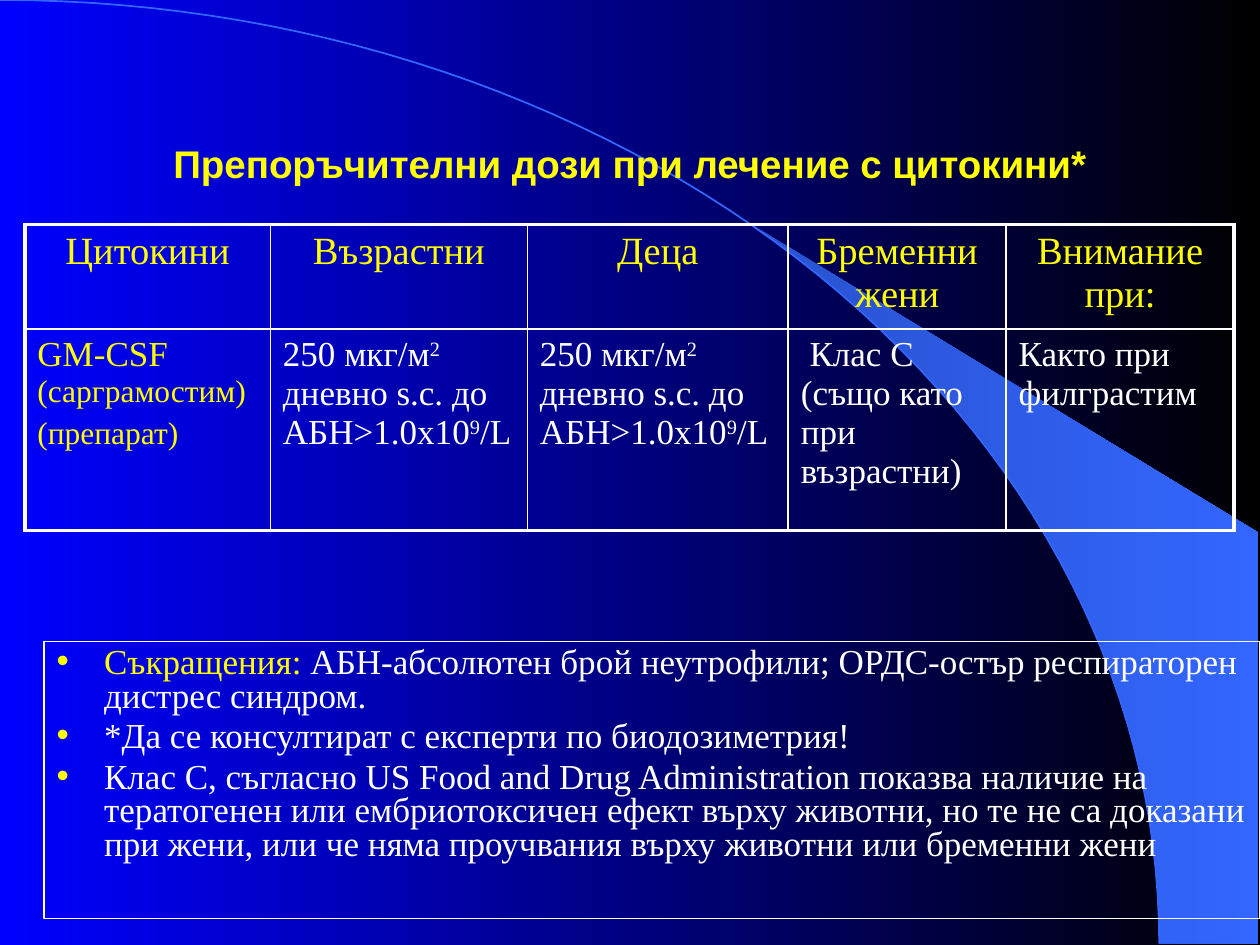
import math

import pptx
import pptx.dml.color
import pptx.enum.text
import pptx.oxml
import pptx.oxml.ns
import pptx.util
from pptx.util import Cm, Pt

COLOURS = {"blue": "0000FF", "black": "000000", "white": "FFFFFF", "yellow": "FFFF00",
           "arc": "3366FF", "arc_dark": "2851CC"}
SERIF = "Times New Roman"
ALIGN = pptx.enum.text.PP_ALIGN
ANCHOR = pptx.enum.text.MSO_ANCHOR
ARC_WIDTH, ARC_HEIGHT = 23.37, 19.02
RIGHT_EDGE = 25.37

TITLE = "Препоръчителни дози при лечение с цитокини*"
COLUMN_WIDTHS = [4.95, 5.18, 5.26, 4.39, 4.6]
ROW_HEIGHTS = [1.96, 4.06]
HEADERS = ["Цитокини", "Възрастни", "Деца", "Бременни жени", "Внимание при:"]
DOSE = "250 мкг/м^2^ дневно s.c. до АБН>1.0x10^9^/L"
# Each paragraph is a list of (text, size, colour); ^ encloses superscripts.
DRUG = [[("GM-CSF ", 20, "yellow"), ("(сарграмостим)", 18, "yellow")],
        [("(препарат)", 18, "yellow")]]
DETAILS = [DOSE, DOSE, " Клас С (също като при възрастни)", "Както при филграстим"]
NOTES = [
    [("Съкращения:", 20, "yellow"),
     (" АБН-абсолютен брой неутрофили; ОРДС-остър респираторен дистрес синдром.", 20, "white")],
    [("*Да се консултират с експерти по биодозиметрия!", 20, "white")],
    [("Клас С, съгласно US Food and Drug Administration показва наличие на тератогенен или "
      "ембриотоксичен ефект върху животни, но те не са доказани при жени, или че няма "
      "проучвания върху животни или бременни жени", 20, "white")],
]


def rgb(name):
    return pptx.dml.color.RGBColor.from_string(COLOURS[name])


def set_values(target, values):
    for name, value in values.items():
        setattr(target, name, value)


def set_gradient(fill, *names):
    """Fill from left to right between two colours."""
    fill.gradient()
    fill.gradient_angle = 0
    for stop, name in zip(fill.gradient_stops, names):
        stop.color.rgb = rgb(name)


def arc_points(start_degrees):
    """Points on the quarter ellipse, from the given angle to its lower end."""
    steps = 60
    for step in range(steps + 1):
        angle = math.radians(start_degrees + (90 - start_degrees) * step / steps)
        yield Cm(ARC_WIDTH * math.sin(angle)), Cm(ARC_HEIGHT * (1 - math.cos(angle)))


def add_outline(slide, points, close):
    builder = slide.shapes.build_freeform(*points[0])
    builder.add_line_segments(points[1:], close=close)
    shape = builder.convert_to_shape()
    shape.shadow.inherit = False
    return shape


def add_backdrop(slide):
    set_gradient(slide.background.fill, "blue", "black")
    corners = [(Cm(RIGHT_EDGE), Cm(y)) for y in (ARC_HEIGHT, 10.74)]
    beam = add_outline(slide, list(arc_points(39.8)) + corners, True)
    set_gradient(beam.fill, "arc_dark", "arc")
    beam.line.fill.background()
    arc = add_outline(slide, list(arc_points(0)), False)
    arc.fill.background()
    arc.line.color.rgb = rgb("arc")
    arc.line.width = Pt(1)


def add_run(paragraph, text, size, colour, font=SERIF, bold=False):
    for index, part in enumerate(text.split("^")):
        run = paragraph.add_run()
        run.text = part
        set_values(run.font, {"name": font, "size": Pt(size), "bold": bold})
        run.font.color.rgb = rgb(colour)
        if index % 2:
            run.font._element.set("baseline", "30000")


def write_paragraphs(frame, paragraphs, **values):
    for index, runs in enumerate(paragraphs):
        paragraph = frame.add_paragraph() if index else frame.paragraphs[0]
        set_values(paragraph, {"space_before": Pt(4), **values})
        for run in runs:
            add_run(paragraph, *run)


def add_text_box(slide, *box):
    shape = slide.shapes.add_textbox(*map(Cm, box))
    set_values(shape.text_frame, {"word_wrap": True})
    return shape


def set_borders(cell, widths):
    """Draw left, right, top and bottom borders of the given widths in points."""
    properties = cell._tc.get_or_add_tcPr()
    for index, (side, width) in enumerate(zip("LRTB", widths)):
        properties.insert(index, pptx.oxml.parse_xml(
            f'<a:ln{side} {pptx.oxml.ns.nsdecls("a")} w="{Pt(width)}"><a:solidFill>'
            f'<a:srgbClr val="{COLOURS["white"]}"/></a:solidFill></a:ln{side}>'))


def add_bullet(paragraph):
    properties = paragraph._p.get_or_add_pPr()
    properties.set("marL", str(Cm(0.96)))
    properties.set("indent", str(Cm(-0.96)))
    for content in (f'<a:buClr {{}}><a:srgbClr val="{COLOURS["yellow"]}"/></a:buClr>',
                    '<a:buFont {} typeface="Arial"/>', '<a:buChar {} char="•"/>'):
        properties.append(pptx.oxml.parse_xml(content.format(pptx.oxml.ns.nsdecls("a"))))


def add_title(slide):
    shape = add_text_box(slide, 1.9, 1.7, 21.6, 3.18)
    shape.text_frame.vertical_anchor = ANCHOR.MIDDLE
    write_paragraphs(shape.text_frame, [[(TITLE, 22, "yellow", "Arial", True)]],
                     alignment=ALIGN.CENTER, space_before=Pt(0))


def add_dose_table(slide):
    rows = [[[[(text, 22, "yellow")]] for text in HEADERS],
            [DRUG] + [[[(text, 20, "white")]] for text in DETAILS]]
    table = slide.shapes.add_table(len(rows), len(HEADERS), Cm(0.5), Cm(4.52),
                                   Cm(sum(COLUMN_WIDTHS)), Cm(sum(ROW_HEIGHTS))).table
    set_values(table, {"first_row": False, "horz_banding": False})
    for column, width in zip(table.columns, COLUMN_WIDTHS):
        column.width = Cm(width)
    last_row, last_column = len(rows) - 1, len(HEADERS) - 1
    for row_index, row in enumerate(rows):
        table.rows[row_index].height = Cm(ROW_HEIGHTS[row_index])
        for column_index, paragraphs in enumerate(row):
            cell = table.cell(row_index, column_index)
            cell.fill.background()
            outer = (column_index == 0, column_index == last_column,
                     row_index == 0, row_index == last_row)
            set_borders(cell, [2.25 if edge else 1 for edge in outer])
            write_paragraphs(cell.text_frame, paragraphs,
                             alignment=ALIGN.LEFT if row_index else ALIGN.CENTER)


def add_notes_box(slide):
    shape = add_text_box(slide, 0.89, 12.93, 24.51, 5.59)
    shape.line.color.rgb = rgb("white")
    shape.line.width = Pt(0.75)
    write_paragraphs(shape.text_frame, NOTES, line_spacing=0.8)
    for paragraph in shape.text_frame.paragraphs:
        add_bullet(paragraph)


def main():
    presentation = pptx.Presentation()
    set_values(presentation, {"slide_width": Cm(25.4), "slide_height": Cm(19.05)})
    slide = presentation.slides.add_slide(presentation.slide_layouts[6])
    add_backdrop(slide)
    add_title(slide)
    add_dose_table(slide)
    add_notes_box(slide)
    presentation.save("out.pptx")


if __name__ == "__main__":
    main()
